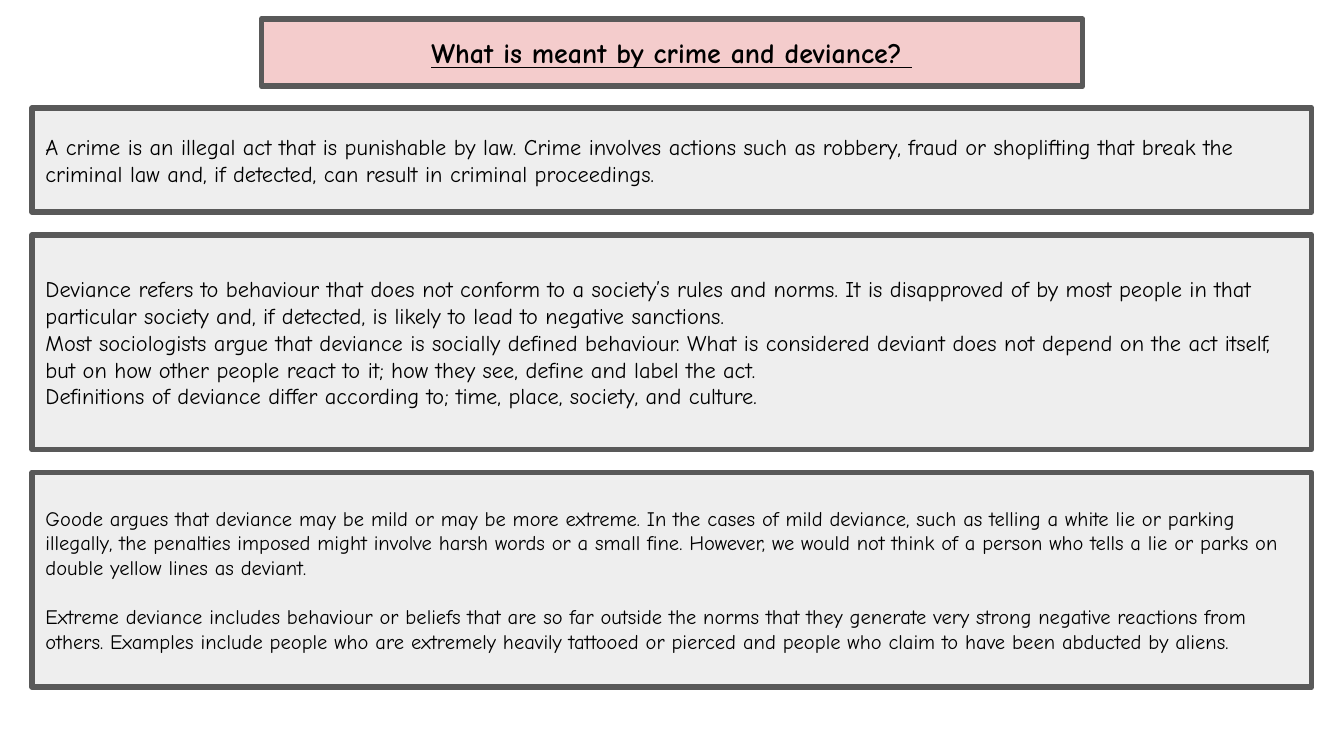
from dataclasses import dataclass

from pptx import Presentation
from pptx.dml.color import RGBColor
from pptx.enum.shapes import MSO_SHAPE
from pptx.enum.text import MSO_ANCHOR, MSO_AUTO_SIZE, PP_ALIGN
from pptx.util import Cm, Pt

RECTANGLE = MSO_SHAPE.RECTANGLE
MIDDLE = MSO_ANCHOR.MIDDLE
NO_AUTOFIT = MSO_AUTO_SIZE.NONE
LEFT, CENTER = PP_ALIGN.LEFT, PP_ALIGN.CENTER

FONT = "Comic Neue"
BLACK, BORDER, PINK, GREY = "000000", "595959", "F4CCCC", "EEEEEE"
SLIDE_WIDTH, SLIDE_HEIGHT = 25.4, 14.29
TITLE_WIDTH, PANEL_WIDTH = 15.52, 24.18
FIRST_PANEL_TOP, PANEL_GAP = 2.04, 0.43


@dataclass(frozen=True)
class Panel:
    height: float
    paragraphs: tuple[str, ...]
    size: float = 12
    space_before: float = 0


PANELS = (
    Panel(1.97, (
        "A crime is an illegal act that is punishable by law. Crime involves actions such as "
        "robbery, fraud or shoplifting that break the criminal law and, if detected, can result "
        "in criminal proceedings.",
    )),
    Panel(4.06, (
        "Deviance refers to behaviour that does not conform to a society’s rules and norms. It is "
        "disapproved of by most people in that particular society and, if detected, is likely to "
        "lead to negative sanctions.",
        "Most sociologists argue that deviance is socially defined behaviour. What is considered "
        "deviant does not depend on the act itself, but on how other people react to it; how they "
        "see, define and label the act.",
        "Definitions of deviance differ according to; time, place, society, and culture.",
    )),
    Panel(4.06, (
        "Goode argues that deviance may be mild or may be more extreme. In the cases of mild "
        "deviance, such as telling a white lie or parking illegally, the penalties imposed might "
        "involve harsh words or a small fine. However, we would not think of a person who tells a "
        "lie or parks on double yellow lines as deviant.",
        "Extreme deviance includes behaviour or beliefs that are so far outside the norms that "
        "they generate very strong negative reactions from others. Examples include people who "
        "are extremely heavily tattooed or pierced and people who claim to have been abducted by "
        "aliens.",
    ), size=11, space_before=13.2),
)


def color(value: str) -> RGBColor:
    return RGBColor.from_string(value)


def style_box(box, fill: str) -> None:
    box.fill.solid()
    box.fill.fore_color.rgb = color(fill)
    box.line.color.rgb = color(BORDER)
    box.line.width = Pt(3)
    frame = box.text_frame
    frame.word_wrap = True
    frame.auto_size = NO_AUTOFIT
    frame.vertical_anchor = MIDDLE
    frame.margin_left = frame.margin_right = Cm(0.25)
    frame.margin_top = frame.margin_bottom = Cm(0.25)


def write(para, text: str, *, size: float, align=LEFT, bold: bool = False,
          underline: bool = False, space_before: float = 0) -> None:
    para.alignment = align
    para.space_before = Pt(space_before)
    span = para.add_run()
    span.text = text
    span.font.name = FONT
    span.font.size = Pt(size)
    span.font.bold = bold
    span.font.underline = underline
    span.font.color.rgb = color(BLACK)


def add_title(page, text: str) -> None:
    box = page.shapes.title
    box.left, box.top = Cm((SLIDE_WIDTH - TITLE_WIDTH) / 2), Cm(0.36)
    box.width, box.height = Cm(TITLE_WIDTH), Cm(1.27)
    style_box(box, PINK)
    write(box.text_frame.paragraphs[0], text, size=15, align=CENTER, bold=True, underline=True)


def add_panel(page, panel: Panel, top: float) -> None:
    box = page.shapes.add_shape(
        RECTANGLE, Cm((SLIDE_WIDTH - PANEL_WIDTH) / 2), Cm(top),
        Cm(PANEL_WIDTH), Cm(panel.height))
    box.shadow.inherit = False
    style_box(box, GREY)
    frame = box.text_frame
    for index, text in enumerate(panel.paragraphs):
        para = frame.add_paragraph() if index else frame.paragraphs[0]
        write(para, text, size=panel.size, space_before=panel.space_before if index else 0)


def main() -> None:
    deck = Presentation()
    deck.slide_width, deck.slide_height = Cm(SLIDE_WIDTH), Cm(SLIDE_HEIGHT)
    page = deck.slides.add_slide(deck.slide_layouts[5])
    add_title(page, "What is meant by crime and deviance? ")
    top = FIRST_PANEL_TOP
    for panel in PANELS:
        add_panel(page, panel, top)
        top += panel.height + PANEL_GAP
    deck.save("out.pptx")


if __name__ == "__main__":
    main()
